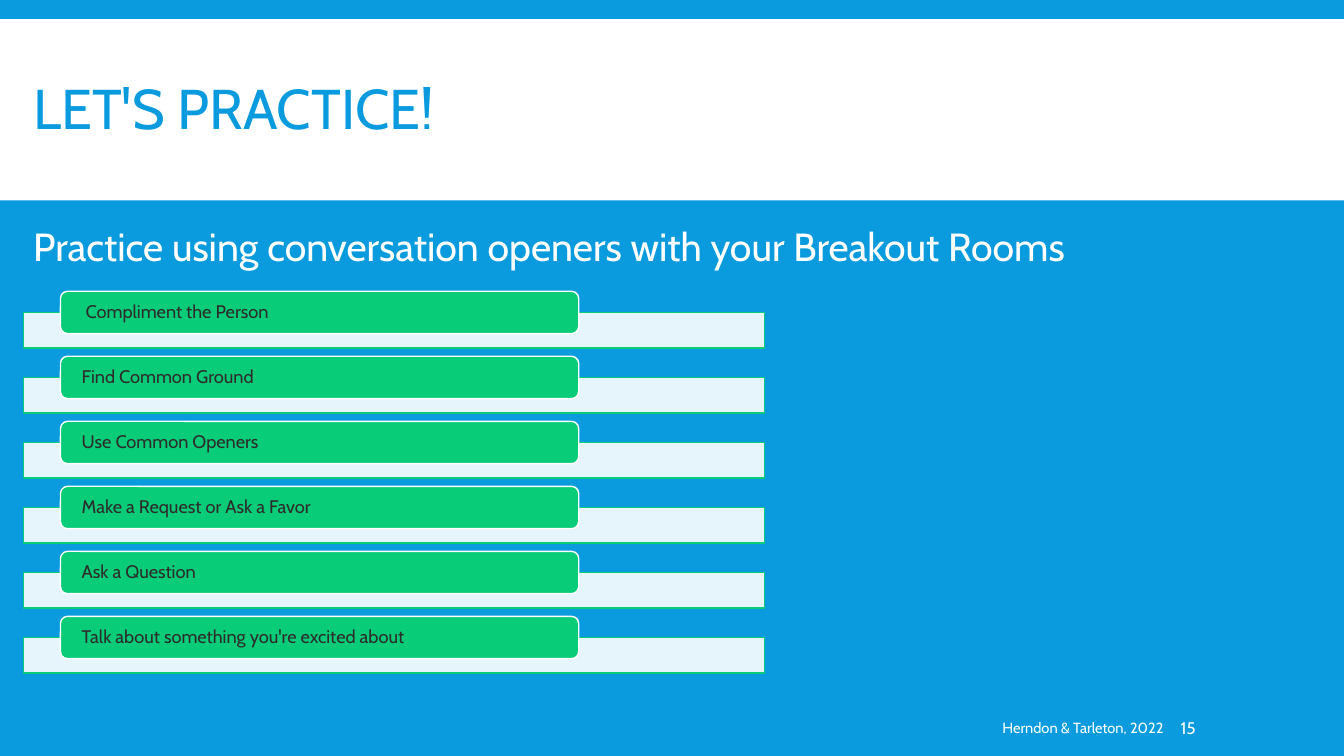
from dataclasses import dataclass

from lxml.etree import SubElement
from pptx import Presentation
from pptx.dml.color import RGBColor
from pptx.enum.shapes import MSO_SHAPE as Preset
from pptx.enum.text import MSO_ANCHOR as Anchor, PP_ALIGN as Align
from pptx.oxml.ns import qn
from pptx.shapes.autoshape import Shape
from pptx.slide import Slide
from pptx.util import Inches, Pt

WIDTH, HEIGHT = Inches(13.33), Inches(7.5)
BLUE, GREEN, WHITE, INK = "099BDD", "08CC78", "FFFFFF", "2C2C2C"
ROW_PITCH = 8.6


@dataclass(frozen=True)
class Area:
    left: float
    top: float
    width: float
    height: float

    def down(self, rows: int) -> "Area":
        return Area(self.left, self.top + rows * ROW_PITCH, self.width, self.height)

    def emu(self) -> tuple[int, int, int, int]:
        return (
            int(WIDTH * self.left / 100),
            int(HEIGHT * self.top / 100),
            int(WIDTH * self.width / 100),
            int(HEIGHT * self.height / 100),
        )


@dataclass(frozen=True)
class Caption:
    text: str
    area: Area
    size: float
    color: str = WHITE
    align: Align = Align.LEFT
    anchor: Anchor = Anchor.MIDDLE
    leading: float = 1.0
    before: float = 0
    inset: float = 0.1


@dataclass(frozen=True)
class Opener:
    text: str
    inset: float = 0.19


BAND = Area(0, 2.53, 100, 24)
BAR = Area(1.73, 41.3, 55.14, 4.75)
TAB = Area(4.5, 38.53, 38.56, 5.6)

CAPTIONS = [
    Caption("LET'S PRACTICE!", Area(1.73, 3.87, 80.27, 22), 40, BLUE, leading=0.85),
    Caption(
        "Practice using conversation openers with your Breakout Rooms",
        Area(1.73, 29.47, 82.15, 7.2), 28, anchor=Anchor.TOP, leading=0.9, before=12,
    ),
    Caption("Herndon & Tarleton, 2022", Area(45.91, 93.6, 41.41, 5.33), 10.5, align=Align.RIGHT),
    Caption("15", Area(87.47, 93.6, 7.73, 5.33), 12, inset=0.05),
]

OPENERS = [
    Opener("Compliment the Person", inset=0.23),
    Opener("Find Common Ground"),
    Opener("Use Common Openers"),
    Opener("Make a Request or Ask a Favor"),
    Opener("Ask a Question"),
    Opener("Talk about something you're excited about"),
]


def rgb(color: str) -> RGBColor:
    return RGBColor.from_string(color)


def write(holder: Shape, caption: Caption) -> None:
    frame = holder.text_frame
    frame.word_wrap = True
    frame.vertical_anchor = caption.anchor
    frame.margin_left = Inches(caption.inset)
    paragraph = frame.paragraphs[0]
    paragraph.alignment = caption.align
    paragraph.line_spacing = caption.leading
    paragraph.space_before = Pt(caption.before)
    run = paragraph.add_run()
    run.text = caption.text
    run.font.name = "Cabin"
    run.font.size = Pt(caption.size)
    run.font.color.rgb = rgb(caption.color)


def draw_block(slide: Slide, preset: Preset, area: Area, fill: str, line: str = "") -> Shape:
    block = slide.shapes.add_shape(preset, *area.emu())
    block.shadow.inherit = False
    block.fill.solid()
    block.fill.fore_color.rgb = rgb(fill)
    if line:
        block.line.color.rgb = rgb(line)
        block.line.width = Pt(1)
    else:
        block.line.fill.background()
    return block


def set_opacity(block: Shape, percent: int) -> None:
    color = block.fill._xPr.find(qn("a:solidFill"))[0]
    SubElement(color, qn("a:alpha")).set("val", str(percent * 1000))


def draw_opener(slide: Slide, opener: Opener, row: int) -> None:
    bar = draw_block(slide, Preset.RECTANGLE, BAR.down(row), WHITE, GREEN)
    set_opacity(bar, 90)
    tab = draw_block(slide, Preset.ROUNDED_RECTANGLE, TAB.down(row), GREEN, WHITE)
    tab.text_frame.margin_top = tab.text_frame.margin_bottom = 0
    write(tab, Caption(opener.text, TAB, 13, INK, leading=0.9, inset=opener.inset))


def main() -> None:
    deck = Presentation()
    deck.slide_width, deck.slide_height = WIDTH, HEIGHT
    slide = deck.slides.add_slide(deck.slide_layouts[6])
    slide.background.fill.solid()
    slide.background.fill.fore_color.rgb = rgb(BLUE)
    draw_block(slide, Preset.RECTANGLE, BAND, WHITE)
    for caption in CAPTIONS:
        write(slide.shapes.add_textbox(*caption.area.emu()), caption)
    for row, opener in enumerate(OPENERS):
        draw_opener(slide, opener, row)
    deck.save("out.pptx")


if __name__ == "__main__":
    main()
